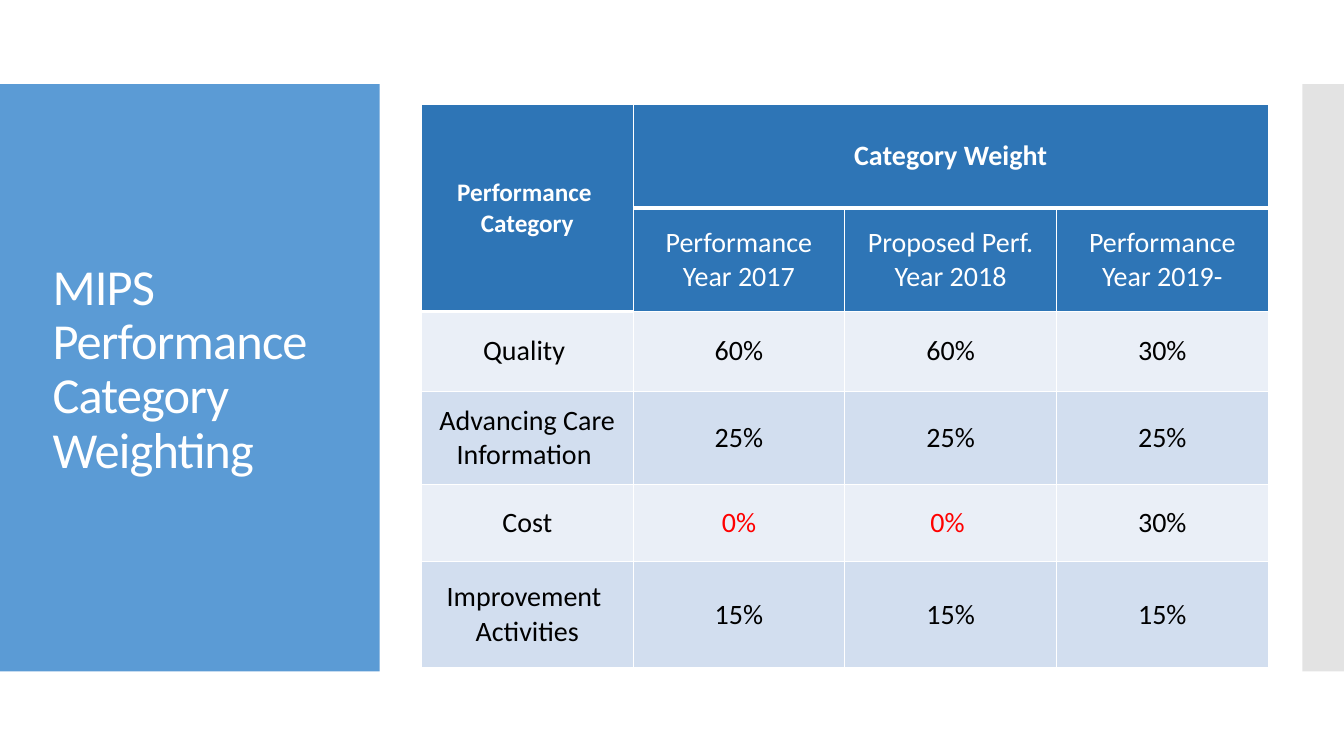
"""Build the MIPS performance category weighting slide."""
from lxml.etree import SubElement
from pptx import Presentation
from pptx.dml.color import RGBColor
from pptx.enum.shapes import MSO_SHAPE
from pptx.enum.text import MSO_ANCHOR, MSO_AUTO_SIZE, PP_ALIGN
from pptx.oxml.ns import qn
from pptx.util import Cm, Pt

WHITE = RGBColor(0xFF, 0xFF, 0xFF)
BLACK = RGBColor(0x00, 0x00, 0x00)
RED = RGBColor(0xFF, 0x00, 0x00)
PANEL_BLUE = RGBColor(0x5B, 0x9B, 0xD5)
EDGE_GREY = RGBColor(0xC8, 0xC8, 0xC8)
HEADER_BLUE = RGBColor(0x2E, 0x75, 0xB6)
BAND_LIGHT = RGBColor(0xEA, 0xEF, 0xF7)
BAND_DARK = RGBColor(0xD2, 0xDE, 0xEF)
FONT = "Calibri"


def add_border(cell, side, width):
    line = SubElement(cell._tc.get_or_add_tcPr(), qn(f"a:ln{side}"), w=str(Pt(width)))
    fill = SubElement(line, qn("a:solidFill"))
    SubElement(fill, qn("a:srgbClr"), val=str(WHITE))


presentation = Presentation()
presentation.slide_width = Cm(33.87)
presentation.slide_height = Cm(19.05)
slide = presentation.slides.add_slide(presentation.slide_layouts[5])
title = slide.shapes.title

for left, width, color in ((0, 9.57, PANEL_BLUE), (32.82, 1.05, EDGE_GREY)):
    panel = slide.shapes.add_shape(
        MSO_SHAPE.RECTANGLE, Cm(left), Cm(2.12), Cm(width), Cm(14.8))
    panel.shadow.inherit = False
    panel.fill.solid()
    panel.fill.fore_color.rgb = color
    panel.line.fill.background()
    title.element.addprevious(panel.element)
edge_color = panel.element.spPr.find(qn("a:solidFill")).find(qn("a:srgbClr"))
SubElement(edge_color, qn("a:alpha"), val="50000")

title.left, title.top, title.width, title.height = Cm(1.07), Cm(4.42), Cm(7.75), Cm(9.83)
title.text_frame.text = "MIPS Performance Category Weighting"
title.text_frame.word_wrap = True
title.text_frame.auto_size = MSO_AUTO_SIZE.NONE
title.text_frame.vertical_anchor = MSO_ANCHOR.MIDDLE
paragraph = title.text_frame.paragraphs[0]
paragraph.alignment = PP_ALIGN.LEFT
paragraph.line_spacing = 0.9
run = paragraph.runs[0]
run.font.name = FONT
run.font.size = Pt(36)
run.font.color.rgb = WHITE
run._r.get_or_add_rPr().set("spc", "-60")

rows = [
    ["Performance \nCategory", "Category Weight", "", ""],
    ["", "Performance Year 2017", "Proposed Perf. Year 2018", "Performance Year 2019-"],
    ["Quality ", "60%", "60%", "30%"],
    ["Advancing Care Information ", "25%", "25%", "25%"],
    ["Cost", "0%", "0% ", "30%"],
    ["Improvement \nActivities", "15%", "15%", "15%"],
]
row_heights = [2.6, 2.61, 2.01, 2.35, 1.93, 2.69]
table = slide.shapes.add_table(
    len(rows), 4, Cm(10.62), Cm(2.64), Cm(21.34), Cm(sum(row_heights))).table
for column in table.columns:
    column.width = Cm(5.335)
for row, height in zip(table.rows, row_heights):
    row.height = Cm(height)
table.cell(0, 0).merge(table.cell(1, 0))
table.cell(0, 1).merge(table.cell(0, 3))

for row_index, texts in enumerate(rows):
    is_header = row_index < 2
    band = BAND_DARK if row_index % 2 else BAND_LIGHT
    for column_index, text in enumerate(texts):
        cell = table.cell(row_index, column_index)
        last_header_row = 0 if column_index else 1
        add_border(cell, "L", 1)
        add_border(cell, "R", 1)
        add_border(cell, "T", 3 if row_index == last_header_row + 1 else 1)
        add_border(cell, "B", 3 if row_index <= last_header_row else 1)
        cell.fill.solid()
        cell.fill.fore_color.rgb = HEADER_BLUE if is_header else band
        cell.vertical_anchor = MSO_ANCHOR.MIDDLE
        cell.margin_left = cell.margin_right = Cm(0.18)
        cell.margin_top = cell.margin_bottom = Cm(0.1)
        if not text:
            continue
        cell.text_frame.text = text
        for paragraph in cell.text_frame.paragraphs:
            paragraph.alignment = PP_ALIGN.CENTER
            font = paragraph.runs[0].font
            font.name = FONT
            font.size = Pt(18 if is_header and column_index == 0 else 20)
            font.bold = row_index == 0
            if is_header:
                font.color.rgb = WHITE
            else:
                font.color.rgb = RED if text.strip() == "0%" else BLACK

presentation.save("out.pptx")
